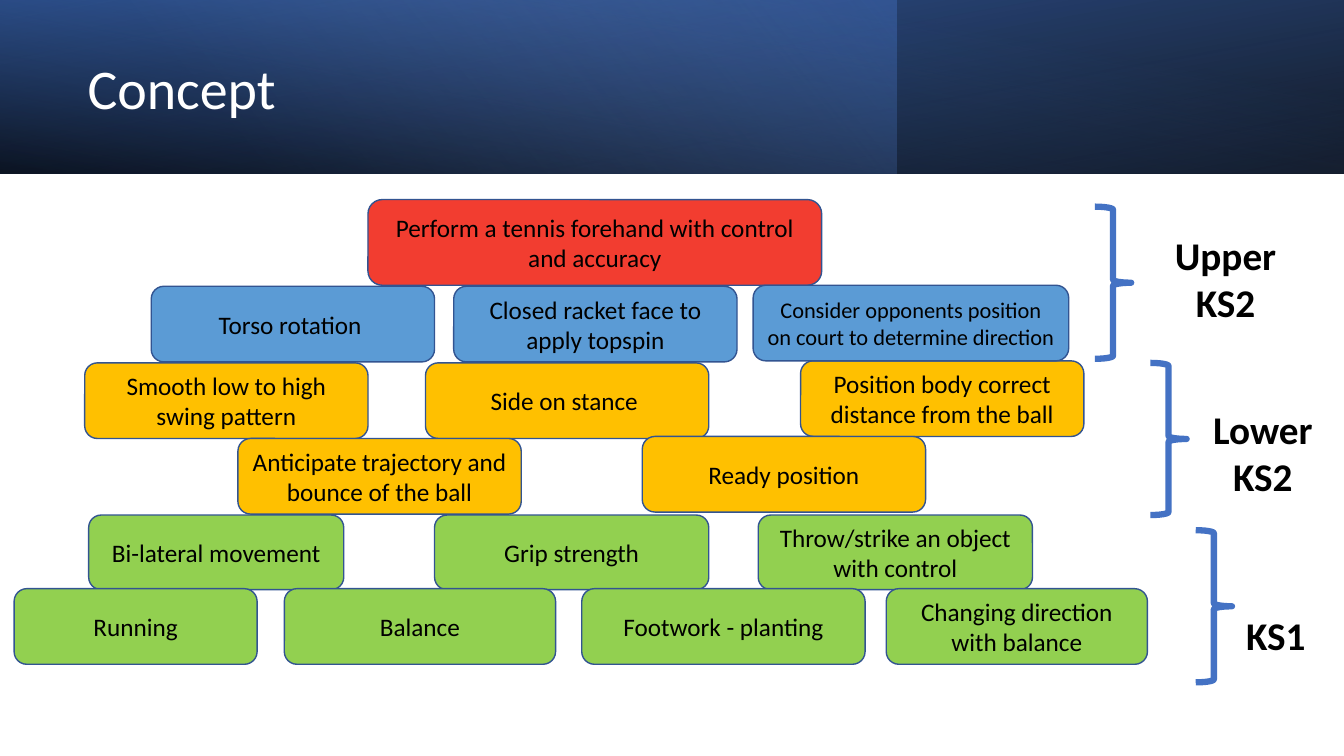
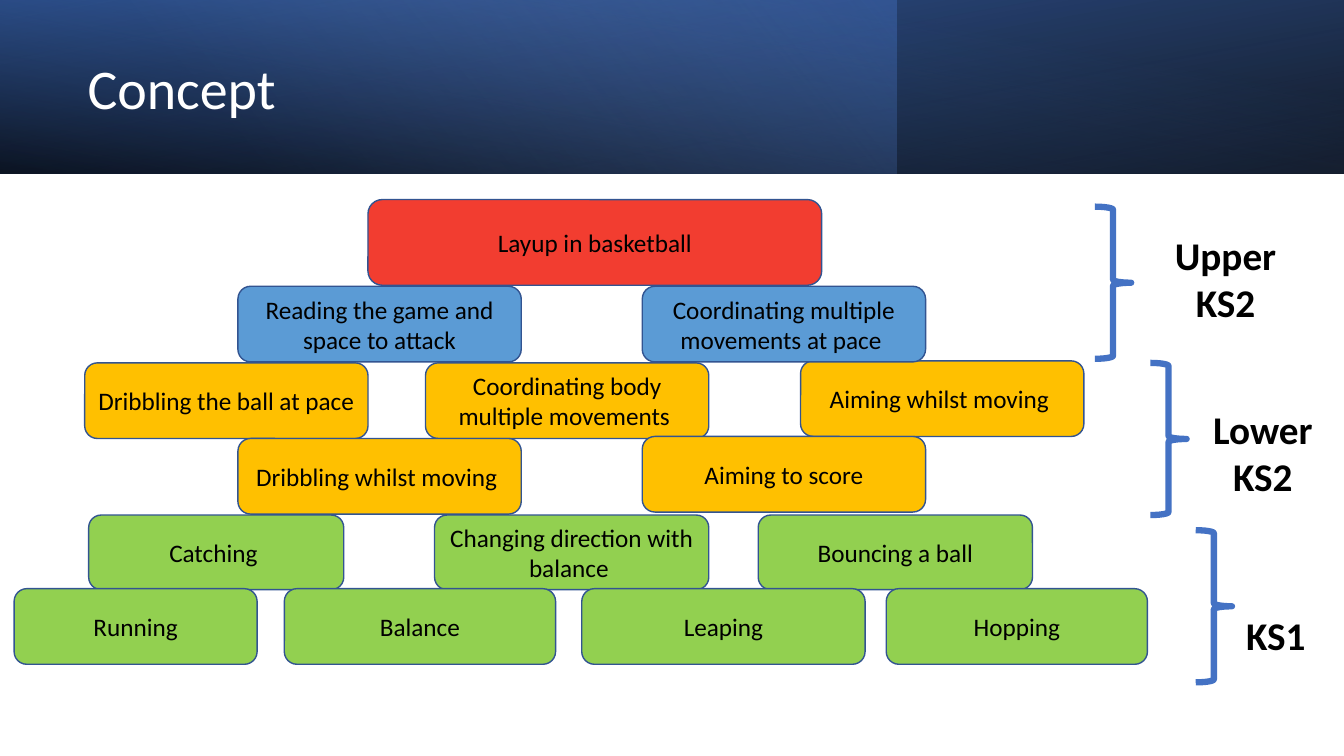
import pptx
import pptx.util
import pptx.dml.color
import pptx.enum.shapes
import pptx.enum.text
import pptx.oxml.ns
import lxml.etree

Inches = pptx.util.Inches
SHAPE = pptx.enum.shapes.MSO_SHAPE
ALIGN = pptx.enum.text.PP_ALIGN
ANCHOR = pptx.enum.text.MSO_ANCHOR

COLORS = {
    "black": "000000", "white": "FFFFFF", "navy": "2F5597", "blue": "4472C4",
    "pale": "8FAADC", "outline": "325491", "red": "F23D30", "sky": "5B9BD5",
    "amber": "FFC000", "green": "92D050",
}

# Header layers: width, rotation, mirrored, angle, stops (position, colour, opacity %)
BANDS = [
    (13.33, 180, True, 100, [(0, "black", 96), (1, "navy", 100)]),
    (8.89, 0, False, 140, [(0, "blue", 41), (0.74, "pale", 0)]),
    (13.33, 0, True, 260, [(0, "black", 63), (0.78, "blue", 15)]),
]

# Row: colour, height, boxes (left, top, width)
ROWS = {
    "goal": ("red", 0.85, [(3.65, 1.98, 4.5)]),
    "ks1 upper": ("green", 0.74,
                  [(0.88, 5.11, 2.53), (4.31, 5.11, 2.72), (7.52, 5.11, 2.72)]),
    "ks1 lower": ("green", 0.75, [(0.14, 5.84, 2.41), (2.82, 5.84, 2.69),
                                  (5.77, 5.84, 2.81), (8.79, 5.84, 2.59)]),
    "lower ks2 upper": ("amber", 0.75,
                        [(0.84, 3.6, 2.81), (4.22, 3.6, 2.81), (7.94, 3.58, 2.81)]),
    "lower ks2 lower": ("amber", 0.75, [(2.36, 4.35, 2.81), (6.37, 4.33, 2.81)]),
    "upper ks2 trio": ("sky", 0.75,
                       [(1.5, 2.84, 2.81), (4.5, 2.84, 2.81), (7.47, 2.83, 3.13)]),
    "upper ks2 pair": ("sky", 0.75, [(2.36, 2.84, 2.81), (6.37, 2.84, 2.81)]),
}

# Stage: label, label box, alignment, brace left and top
STAGES = [
    ("Upper KS2", (11.49, 2.25, 1.33, 1.04), ALIGN.CENTER, (10.86, 2.05)),
    ("Lower KS2", (11.86, 3.97, 1.33, 1.04), ALIGN.CENTER, (11.41, 3.6)),
    ("KS1", (12.26, 6.02, 0.89, 0.57), ALIGN.LEFT, (11.86, 5.26)),
]

SLIDES = [
    {
        "goal": ["Perform a tennis forehand with control and accuracy"],
        "ks1 upper": ["Bi-lateral movement", "Grip strength",
                      "Throw/strike an object with control"],
        "ks1 lower": ["Running", "Balance", "Footwork - planting",
                      "Changing direction with balance"],
        "lower ks2 upper": ["Smooth low to high swing pattern", "Side on stance ",
                            "Position body correct distance from the ball"],
        "lower ks2 lower": ["Anticipate trajectory and bounce of the ball",
                            "Ready position"],
        "upper ks2 trio": ["Torso rotation ", "Closed racket face to apply topspin",
                           "Consider opponents position on court to determine direction"],
    },
    {
        "goal": ["Layup in basketball"],
        "ks1 upper": ["Catching ", "Changing direction with balance ",
                      "Bouncing a ball"],
        "ks1 lower": ["Running", "Balance", "Leaping", "Hopping"],
        "lower ks2 upper": ["Dribbling the ball at pace",
                            "Coordinating body multiple movements ",
                            "Aiming whilst moving "],
        "lower ks2 lower": ["Dribbling whilst moving ", "Aiming to score"],
        "upper ks2 pair": ["Reading the game and space to attack",
                           "Coordinating multiple movements at pace "],
    },
]


def rgb(name):
    return pptx.dml.color.RGBColor.from_string(COLORS[name])


class Deck:
    font = "Calibri"

    def __init__(self):
        self.prs = pptx.Presentation()
        self.prs.slide_width = Inches(13.33)
        self.prs.slide_height = Inches(7.5)
        self.s = None

    def slide(self, title):
        self.s = self.prs.slides.add_slide(self.prs.slide_layouts[6])
        for band in BANDS:
            self.band(*band)
        self.label(title, (0.77, 0.27, 7.72, 1.27), 40, "white",
                   anchor=ANCHOR.MIDDLE, spacing=0.9)

    def shape(self, kind, at):
        sp = self.s.shapes.add_shape(kind, *map(Inches, at))
        sp.shadow.inherit = False
        return sp

    def band(self, width, rotation, mirrored, angle, stops):
        sp = self.shape(SHAPE.RECTANGLE, (0, 0, width, 1.72))
        sp.line.fill.background()
        sp.rotation = rotation
        sp.fill.gradient()
        sp.fill.gradient_angle = 360 - angle
        for stop, (position, color, _) in zip(sp.fill.gradient_stops, stops):
            stop.position = position
            stop.color.rgb = rgb(color)
        qn = pptx.oxml.ns.qn
        spPr = sp._element.spPr
        for clr, (_, _, opacity) in zip(spPr.iter(qn("a:srgbClr")), stops):
            lxml.etree.SubElement(clr, qn("a:alpha")).set("val", str(opacity * 1000))
        if mirrored:
            spPr.find(qn("a:xfrm")).set("flipH", "1")

    def add_text(self, sp, text, size, color, align, anchor, bold=False, spacing=None):
        tf = sp.text_frame
        tf.word_wrap = True
        tf.vertical_anchor = anchor
        p = tf.paragraphs[0]
        p.alignment = align
        p.line_spacing = spacing
        r = p.add_run()
        r.text = text
        r.font.name = self.font
        r.font.size = pptx.util.Pt(size)
        r.font.bold = bold
        r.font.color.rgb = rgb(color)

    def label(self, text, at, size, color, align=ALIGN.LEFT, anchor=ANCHOR.TOP,
              bold=False, spacing=None):
        sp = self.s.shapes.add_textbox(*map(Inches, at))
        self.add_text(sp, text, size, color, align, anchor, bold, spacing)

    def box(self, text, at, fill):
        sp = self.shape(SHAPE.ROUNDED_RECTANGLE, at)
        sp.fill.solid()
        sp.fill.fore_color.rgb = rgb(fill)
        sp.line.color.rgb = rgb("outline")
        sp.line.width = pptx.util.Pt(1)
        size = 16 if len(text) > 55 else 18
        self.add_text(sp, text, size, "black", ALIGN.CENTER, ANCHOR.MIDDLE)

    def brace(self, left, top):
        sp = self.shape(SHAPE.RIGHT_BRACE, (left, top, 0.36, 1.51))
        sp.fill.background()
        sp.line.color.rgb = rgb("blue")
        sp.line.width = pptx.util.Pt(4.5)

    def pyramid(self, rows):
        for name, texts in rows.items():
            color, height, places = ROWS[name]
            for text, place in zip(texts, places):
                self.box(text, (*place, height), color)

    def stages(self):
        for text, at, align, corner in STAGES:
            self.brace(*corner)
            self.label(text, at, 28, "black", align, bold=True)


def main():
    deck = Deck()
    for rows in SLIDES:
        deck.slide("Concept")
        deck.pyramid(rows)
        deck.stages()
    deck.prs.save("out.pptx")


if __name__ == "__main__":
    main()
